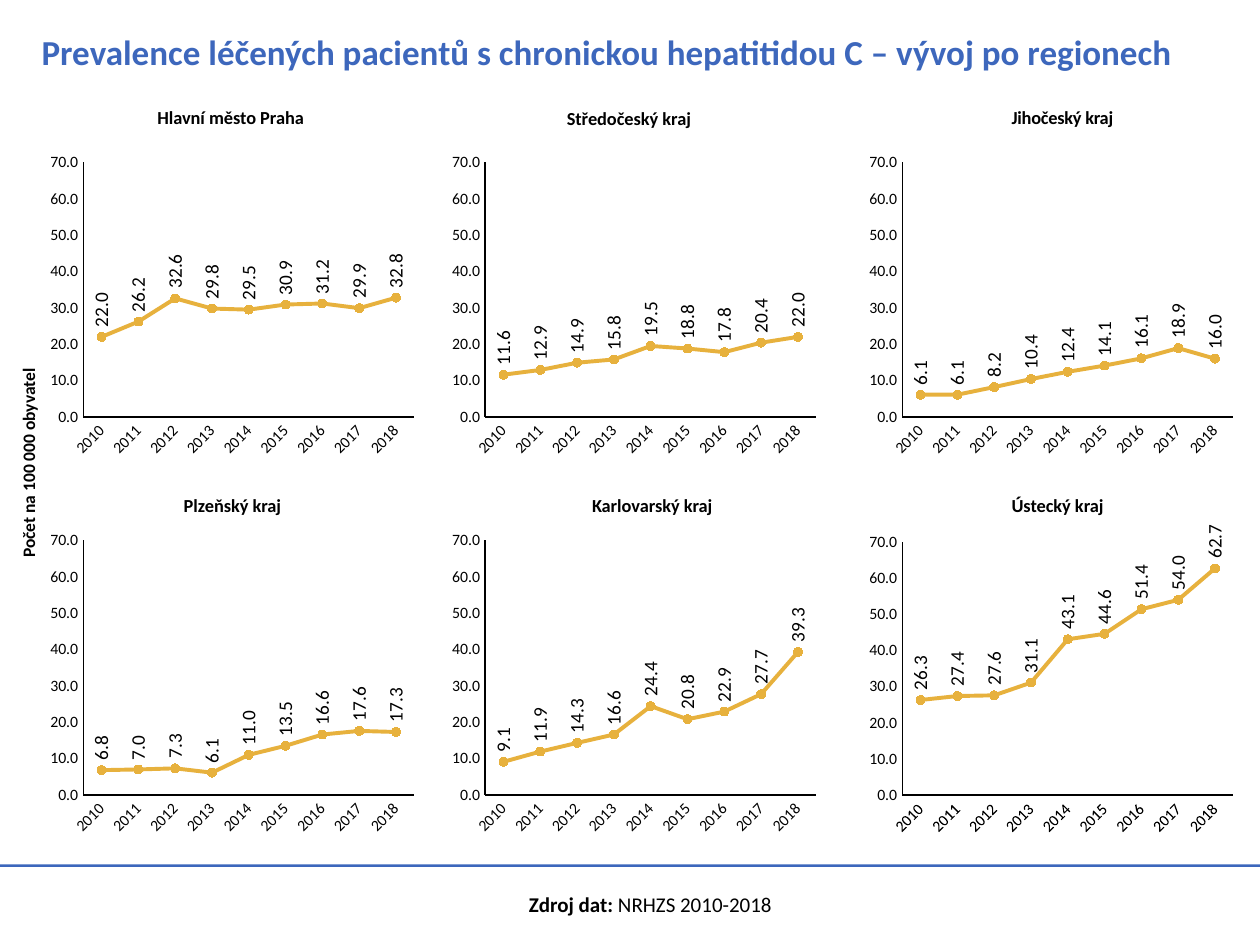
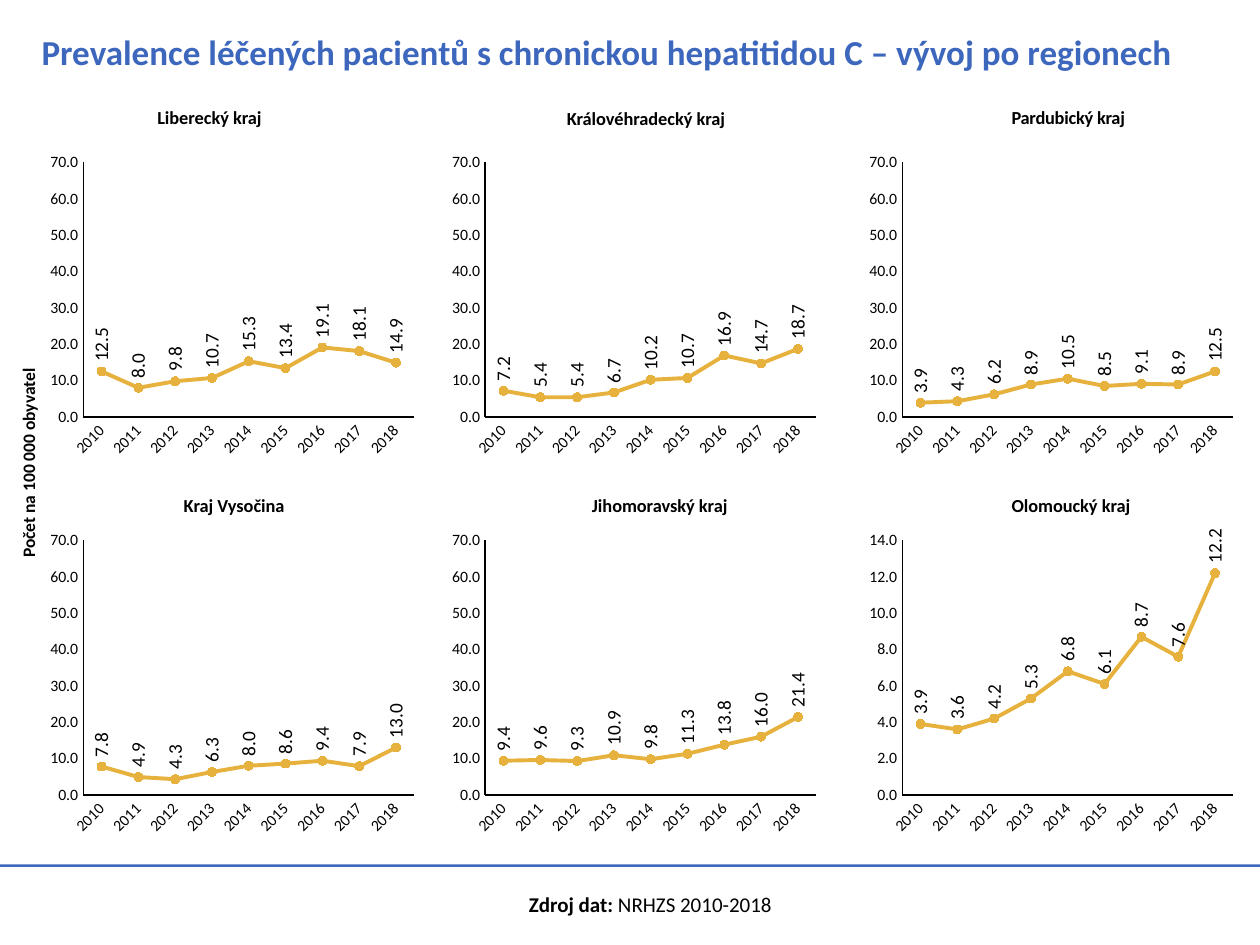
from dataclasses import dataclass

from pptx import Presentation
from pptx.chart.data import CategoryChartData
from pptx.dml.color import RGBColor
from pptx.enum.chart import (XL_CHART_TYPE, XL_LABEL_POSITION,
                             XL_MARKER_STYLE, XL_TICK_MARK)
from pptx.enum.shapes import MSO_SHAPE
from pptx.enum.text import MSO_ANCHOR, MSO_AUTO_SIZE, PP_ALIGN
from pptx.oxml import parse_xml
from pptx.oxml.ns import nsdecls
from pptx.util import Inches, Pt

LINE_MARKERS = XL_CHART_TYPE.LINE_MARKERS
ABOVE = XL_LABEL_POSITION.ABOVE
CIRCLE = XL_MARKER_STYLE.CIRCLE
NO_TICK = XL_TICK_MARK.NONE
RECTANGLE = MSO_SHAPE.RECTANGLE
TOP = MSO_ANCHOR.TOP
NO_AUTOFIT, GROW = MSO_AUTO_SIZE.NONE, MSO_AUTO_SIZE.SHAPE_TO_FIT_TEXT
LEFT, CENTER = PP_ALIGN.LEFT, PP_ALIGN.CENTER

COLORS = {"blue": "3D67BC", "gold": "E7B13D", "black": "000000"}
FONT = "Calibri"
TITLE = "Prevalence léčených pacientů s chronickou hepatitidou C – vývoj po regionech"
TITLE_FONT = {"size": Pt(20), "bold": True}
CAPTION_FONT = {"size": Pt(10.5), "bold": True}
UNIT_FONT = {"size": Pt(10), "bold": True}
CHART_FONT = {"size": Pt(10)}
AXIS_FONT = {"size": Pt(9)}
LABEL_FONT = {"size": Pt(11)}
TIGHT_SPACING = "-10"

YEARS = [str(year) for year in range(2010, 2019)]
NUMBER_FORMAT = "#,##0.0"
AXIS_MAX = 70
CHART_WIDTH, CHART_HEIGHT = 3.01, 2.51
CHART_LEFTS = (0.34, 3.53, 6.84)
CHART_TOPS = (1.16, 4.16)
# Shares of the chart size, from lengths in inches
PLOT_AREA = {"x": 0.32 / CHART_WIDTH, "y": 0.13 / CHART_HEIGHT,
             "w": 2.63 / CHART_WIDTH, "h": 2.02 / CHART_HEIGHT}
ROTATIONS = {"c:catAx": -45, "c:dLbls": -90}


@dataclass(frozen=True)
class CaptionSpot:
    left: float
    top: float


@dataclass(frozen=True)
class Region:
    name: str
    caption_width: float
    values: tuple[float, ...]
    tight: bool = False
    fixed_max: bool = True


# Row by row, matching the regions of each slide
CAPTION_SPOTS = (
    CaptionSpot(1.15, 0.79), CaptionSpot(4.4, 0.8), CaptionSpot(7.93, 0.79),
    CaptionSpot(1.36, 3.87), CaptionSpot(4.6, 3.87), CaptionSpot(7.93, 3.87),
)

SLIDES = (
    (
        Region("Hlavní město Praha", 1.39,
               (22, 26.2, 32.6, 29.8, 29.5, 30.9, 31.2, 29.9, 32.8)),
        Region("Středočeský kraj", 1.21,
               (11.6, 12.9, 14.9, 15.8, 19.5, 18.8, 17.8, 20.4, 22)),
        Region("Jihočeský kraj", 3.13,
               (6.1, 6.1, 8.2, 10.4, 12.4, 14.1, 16.1, 18.9, 16), tight=True),
        Region("Plzeňský kraj", 0.99,
               (6.8, 7, 7.3, 6.1, 11, 13.5, 16.6, 17.6, 17.3)),
        Region("Karlovarský kraj", 1.18,
               (9.1, 11.9, 14.3, 16.6, 24.4, 20.8, 22.9, 27.7, 39.3)),
        Region("Ústecký kraj", 0.95,
               (26.3, 27.4, 27.6, 31.1, 43.1, 44.6, 51.4, 54, 62.7),
               fixed_max=False),
    ),
    (
        Region("Liberecký kraj", 1.05,
               (12.5, 8, 9.8, 10.7, 15.3, 13.4, 19.1, 18.1, 14.9)),
        Region("Královéhradecký kraj", 1.49,
               (7.2, 5.4, 5.4, 6.7, 10.2, 10.7, 16.9, 14.7, 18.7)),
        Region("Pardubický kraj", 3.13,
               (3.9, 4.3, 6.2, 8.9, 10.5, 8.5, 9.1, 8.9, 12.5), tight=True),
        Region("Kraj Vysočina", 1.02,
               (7.8, 4.9, 4.3, 6.3, 8, 8.6, 9.4, 7.9, 13)),
        Region("Jihomoravský kraj", 1.3,
               (9.4, 9.6, 9.3, 10.9, 9.8, 11.3, 13.8, 16, 21.4)),
        Region("Olomoucký kraj", 1.16,
               (3.9, 3.6, 4.2, 5.3, 6.8, 6.1, 8.7, 7.6, 12.2),
               fixed_max=False),
    ),
)


def rgb(color: str) -> RGBColor:
    return RGBColor.from_string(COLORS[color])


def format_font(font, values: dict, color: str = "black") -> None:
    for name, value in {"name": FONT, **values}.items():
        setattr(font, name, value)
    font.color.rgb = rgb(color)


def fill_solid(fill, color: str) -> None:
    fill.solid()
    fill.fore_color.rgb = rgb(color)


def format_line(line, color: str, width: float) -> None:
    fill_solid(line.fill, color)
    line.width = Pt(width)


def add_text(slide, box: tuple, runs: tuple, align=LEFT, wrap: bool = False):
    """Add a one-line text box; runs holds (text, font values) pairs."""
    sp = slide.shapes.add_textbox(*map(Inches, box))
    tf = sp.text_frame
    tf.word_wrap = wrap
    tf.auto_size = GROW
    p = tf.paragraphs[0]
    p.alignment = align
    for text, values in runs:
        r = p.add_run()
        r.text = text
        format_font(r.font, values)
    return sp


def add_caption(slide, region: Region, spot: CaptionSpot) -> None:
    sp = add_text(slide, (spot.left, spot.top, region.caption_width, 0.28),
                  ((region.name, CAPTION_FONT),), wrap=region.tight)
    if region.tight:
        r = sp.text_frame.paragraphs[0].runs[0]
        r._r.get_or_add_rPr().set("spc", TIGHT_SPACING)


def place_plot(chart) -> None:
    """Fix the inner plot area and turn the year and value labels."""
    space = chart._chartSpace
    plot_area = space.xpath("c:chart/c:plotArea")[0]
    for layout in plot_area.xpath("c:layout"):
        plot_area.remove(layout)
    modes = "".join(f'<c:{side}Mode val="edge"/>' for side in "xy")
    sizes = "".join(f'<c:{k} val="{v:.4f}"/>' for k, v in PLOT_AREA.items())
    plot_area.insert(0, parse_xml(
        f'<c:layout {nsdecls("c")}><c:manualLayout>'
        f'<c:layoutTarget val="inner"/>{modes}{sizes}'
        '</c:manualLayout></c:layout>'))
    for parent, degrees in ROTATIONS.items():
        for body in space.xpath(f".//{parent}/c:txPr/a:bodyPr"):
            body.set("rot", str(degrees * 60000))
            body.set("vert", "horz")


def add_region_chart(slide, region: Region, left: float, top: float) -> None:
    data = CategoryChartData(number_format=NUMBER_FORMAT)
    data.categories = YEARS
    data.add_series("Series 1", region.values)
    box = map(Inches, (left, top, CHART_WIDTH, CHART_HEIGHT))
    chart = slide.shapes.add_chart(LINE_MARKERS, *box, data).chart
    chart.has_title = chart.has_legend = False
    format_font(chart.font, CHART_FONT)

    for axis in (chart.category_axis, chart.value_axis):
        axis.has_major_gridlines = False
        axis.major_tick_mark = axis.minor_tick_mark = NO_TICK
        format_font(axis.tick_labels.font, AXIS_FONT)
        format_line(axis.format.line, "black", 0.75)
    number_labels = chart.value_axis.tick_labels
    number_labels.number_format = NUMBER_FORMAT
    number_labels.number_format_is_linked = False
    if region.fixed_max:
        chart.value_axis.maximum_scale = AXIS_MAX

    plot = chart.plots[0]
    plot.vary_by_categories = False
    series = plot.series[0]
    series.smooth = False
    format_line(series.format.line, "gold", 2.25)
    marker = series.marker
    marker.style, marker.size = CIRCLE, 5
    fill_solid(marker.format.fill, "gold")
    format_line(marker.format.line, "gold", 0.75)

    labels = series.data_labels
    values = {"show_value": True, "position": ABOVE,
              "number_format": NUMBER_FORMAT, "number_format_is_linked": False}
    for name, value in values.items():
        setattr(labels, name, value)
    format_font(labels.font, LABEL_FONT)
    place_plot(chart)


def add_frame(slide) -> None:
    """Add what every slide shares: title, band, unit and data source."""
    band = slide.shapes.add_shape(
        RECTANGLE, *map(Inches, (0, 6.86, 10, 0.02)))
    band.shadow.inherit = False
    fill_solid(band.fill, "blue")
    band.line.fill.background()

    title = slide.shapes.title
    title.left, title.top, title.width, title.height = map(
        Inches, (0.23, 0.19, 9.69, 0.5))
    tf = title.text_frame
    tf.text = TITLE
    tf.auto_size = NO_AUTOFIT
    tf.vertical_anchor = TOP
    p = tf.paragraphs[0]
    p.alignment = LEFT
    format_font(p.runs[0].font, TITLE_FONT, "blue")

    unit = add_text(slide, (-1.25, 3.54, 2.95, 0.27),
                    (("Počet na 100 000 obyvatel", UNIT_FONT),), CENTER, True)
    unit.rotation = 270
    add_text(slide, (4.1, 7.03, 2.16, 0.3),
             (("Zdroj dat: ", {"size": Pt(12), "bold": True}),
              ("NRHZS 2010-2018", {"size": Pt(12), "bold": False})))


def add_regions_slide(prs, regions: tuple[Region, ...]) -> None:
    slide = prs.slides.add_slide(prs.slide_layouts[5])
    add_frame(slide)
    for i, (region, spot) in enumerate(zip(regions, CAPTION_SPOTS)):
        row, col = divmod(i, len(CHART_LEFTS))
        add_region_chart(slide, region, CHART_LEFTS[col], CHART_TOPS[row])
        add_caption(slide, region, spot)


def main() -> None:
    prs = Presentation()
    prs.slide_width, prs.slide_height = Inches(10), Inches(7.5)
    for regions in SLIDES:
        add_regions_slide(prs, regions)
    prs.save("out.pptx")


if __name__ == "__main__":
    main()
